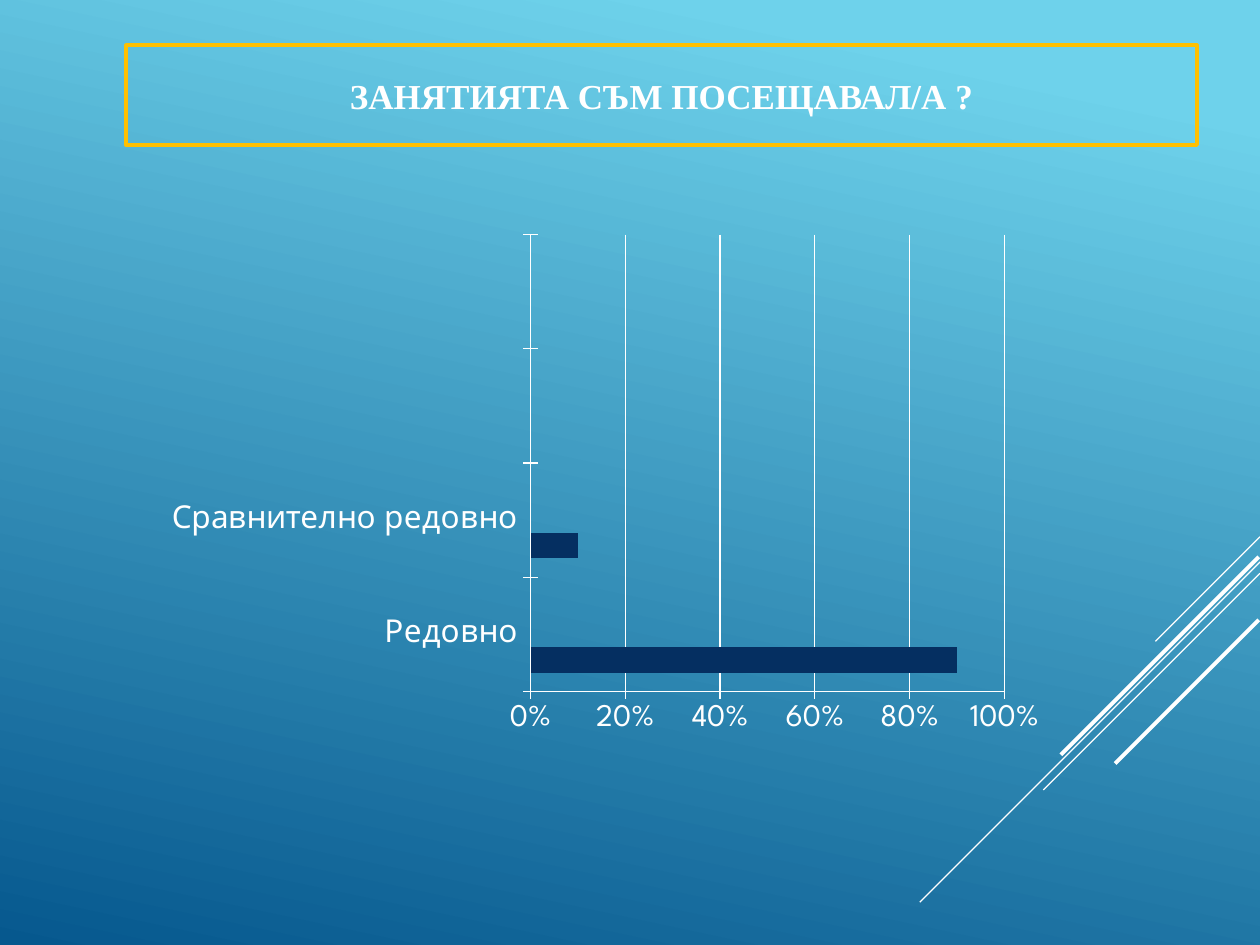
from pptx import Presentation
from pptx.chart.data import CategoryChartData
from pptx.dml.color import RGBColor
from pptx.enum.chart import XL_CHART_TYPE as ChartType, XL_TICK_MARK as Tick
from pptx.enum.shapes import MSO_CONNECTOR as Connector, MSO_SHAPE as Shape
from pptx.enum.text import MSO_ANCHOR as Anchor, PP_ALIGN as Align
from pptx.oxml.ns import qn
from pptx.util import Inches, Pt
from lxml.etree import SubElement

WHITE = RGBColor(0xFF, 0xFF, 0xFF)
GOLD = RGBColor(0xFF, 0xC0, 0x00)
SKY = RGBColor(0x6E, 0xD2, 0xEB)
DEEP_BLUE = RGBColor(0x06, 0x58, 0x8E)
NAVY = RGBColor(0x05, 0x2F, 0x61)
MAGENTA = RGBColor(0xA5, 0x0E, 0x82)
GREEN = RGBColor(0x14, 0x96, 0x7C)

ANSWERS = ["Редовно", "Сравнително редовно", "", ""]
SERIES = [
    ("Series 1", [0.9, 0.1, None, None], NAVY),
    ("Series 2", [None] * 4, MAGENTA),
    ("Series 3", [None] * 4, GREEN),
]
RAYS = [
    (10, 4.26, 0.83, 0.75),
    (10, 4.46, 2.7, 0.75),
    (10, 4.55, 1.72, 0.75),
    (9.99, 4.42, 1.57, 2.25),
    (9.99, 4.92, 1.14, 2.25),
]


def paint_background(slide):
    """Fill the slide with a blue gradient running down and slightly left."""
    fill = slide.background.fill
    fill.gradient()
    fill.gradient_angle = 360 - 102
    for stop, position, color in zip(fill.gradient_stops, (0.1, 1), (SKY, DEEP_BLUE)):
        stop.position = position
        stop.color.rgb = color


def add_ray(slide, right, top, reach, weight):
    """Draw a diagonal line at 45 degrees, down and left from its upper end."""
    ray = slide.shapes.add_connector(
        Connector.STRAIGHT, Inches(right), Inches(top),
        Inches(right - reach), Inches(top + reach))
    ray.line.color.rgb = WHITE
    ray.line.width = Pt(weight)
    SubElement(ray._element.spPr, qn("a:effectLst"))


def add_question(slide, wording):
    """Add the gold-framed question at the top."""
    frame = slide.shapes.add_shape(
        Shape.RECTANGLE, Inches(1), Inches(0.36), Inches(8.5), Inches(0.79))
    frame.shadow.inherit = False
    frame.fill.background()
    frame.line.color.rgb = GOLD
    frame.line.width = Pt(2.25)
    frame.text_frame.word_wrap = True
    frame.text_frame.vertical_anchor = Anchor.MIDDLE
    question = frame.text_frame.paragraphs[0]
    question.text = wording
    question.alignment = Align.CENTER
    question.space_before = Pt(5.8)
    question.font.name = "Times New Roman"
    question.font.size = Pt(20)
    question.font.bold = True
    question.font.color.rgb = WHITE


def style_axis(axis):
    """Give an axis a thin white line with crossing ticks."""
    axis.major_tick_mark = Tick.CROSS
    axis.minor_tick_mark = Tick.NONE
    axis.format.line.color.rgb = WHITE
    axis.format.line.width = Pt(0.75)


def add_attendance_chart(slide):
    """Add the bar chart of attendance answers."""
    attendance = CategoryChartData(number_format="0%")
    attendance.categories = ANSWERS
    for name, shares, _ in SERIES:
        attendance.add_series(name, shares)
    chart = slide.shapes.add_chart(
        ChartType.BAR_CLUSTERED, Inches(1.22), Inches(1.78),
        Inches(7.17), Inches(4.12), attendance).chart
    chart.has_legend = False
    chart.has_title = False
    chart.font.name = "League Spartan"
    chart.font.size = Pt(18)
    chart.font.color.rgb = WHITE

    bars = chart.plots[0]
    bars.gap_width = 150
    bars.vary_by_categories = False
    for series, (_, _, color) in zip(bars.series, SERIES):
        series.format.fill.solid()
        series.format.fill.fore_color.rgb = color

    style_axis(chart.category_axis)
    shares_axis = chart.value_axis
    style_axis(shares_axis)
    shares_axis.minimum_scale = 0
    shares_axis.maximum_scale = 1
    shares_axis.major_unit = 0.2
    shares_axis.tick_labels.number_format = "0%"
    shares_axis.tick_labels.number_format_is_linked = False
    shares_axis.has_major_gridlines = True
    shares_axis.major_gridlines.format.line.color.rgb = WHITE
    shares_axis.major_gridlines.format.line.width = Pt(0.75)


def main():
    """Build and save the slide."""
    deck = Presentation()
    deck.slide_width, deck.slide_height = Inches(10), Inches(7.5)
    slide = deck.slides.add_slide(deck.slide_layouts[6])
    paint_background(slide)
    for ray in RAYS:
        add_ray(slide, *ray)
    add_question(slide, "ЗАНЯТИЯТА СЪМ ПОСЕЩАВАЛ/А ?")
    add_attendance_chart(slide)
    deck.save("out.pptx")


if __name__ == "__main__":
    main()
